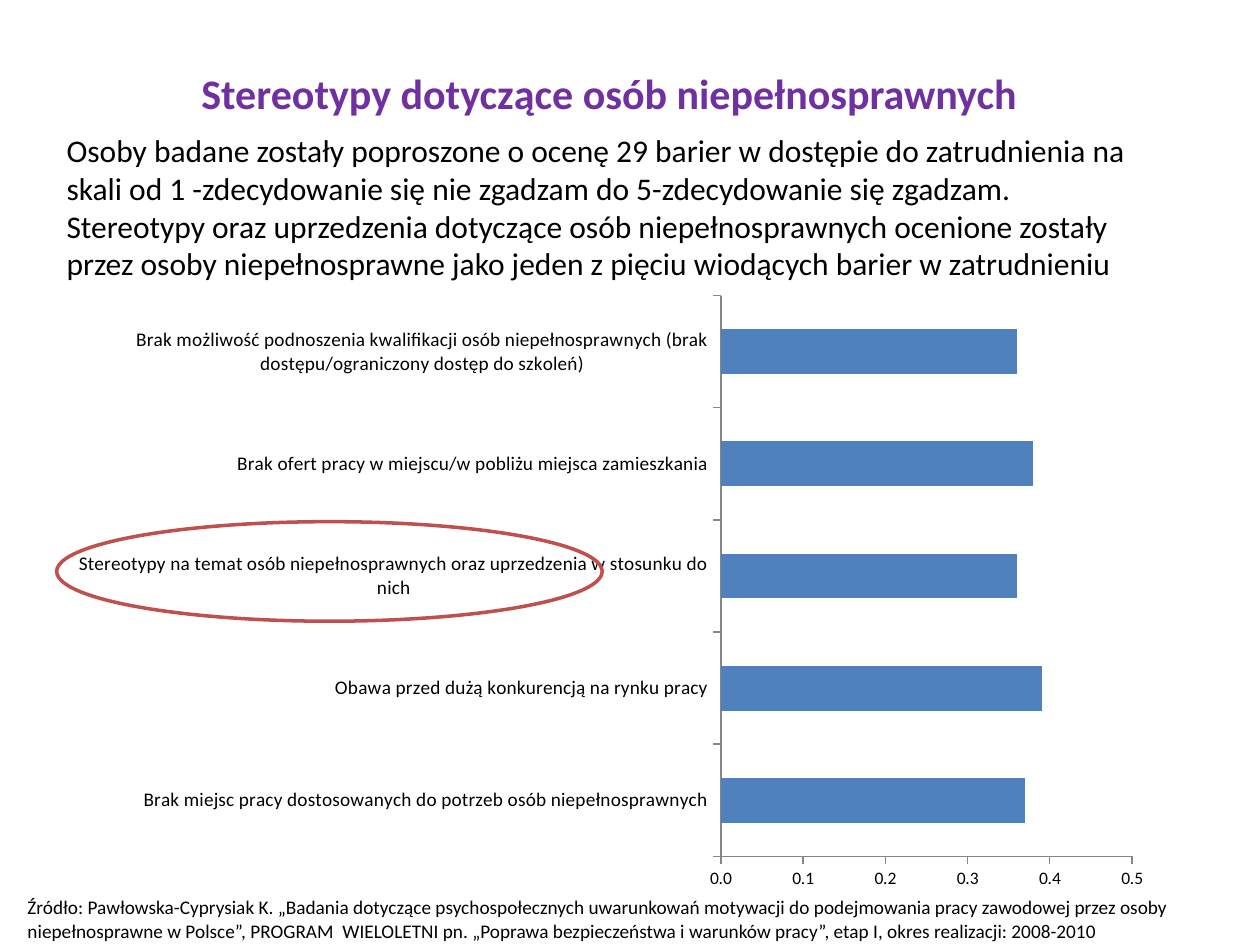
"""Build the slide on stereotypes about disabled people with a bar chart of barriers."""
import dataclasses

import pptx
import pptx.chart.data
import pptx.dml.color
import pptx.enum.chart
import pptx.enum.shapes
import pptx.enum.text
import pptx.oxml
import pptx.oxml.ns
import pptx.util


@dataclasses.dataclass(frozen=True)
class Theme:
    font: str = "Calibri"
    title: str = "7030A0"
    text: str = "000000"
    bar: str = "4F81BD"
    highlight: str = "C0504D"
    axis: str = "868686"
    title_size: int = 24
    body_size: int = 18
    label_size: int = 11
    value_size: int = 10


theme = Theme()
presentation = pptx.Presentation()
presentation.slide_width = pptx.util.Inches(10)
presentation.slide_height = pptx.util.Inches(7.5)
slide = presentation.slides.add_slide(presentation.slide_layouts[6])
COLUMN = presentation.slide_width / 100
ROW = presentation.slide_height / 75


def place(left, top, width, height):
    """Turn grid columns and rows into slide lengths."""
    return round(left * COLUMN), round(top * ROW), round(width * COLUMN), round(height * ROW)


def style(font, size, color, bold=False):
    """Set the look of a font."""
    font.name = theme.font
    font.size = pptx.util.Pt(size)
    font.bold = bold
    font.color.rgb = pptx.dml.color.RGBColor.from_string(color)


align = pptx.enum.text.PP_ALIGN
texts = [
    ((1.5, 4.9, 93.7, 5), "Stereotypy dotyczące osób niepełnosprawnych",
     theme.title_size, theme.title, True, align.CENTER),
    ((4.3, 9.9, 86.6, 13.1),
     "Osoby badane zostały poproszone o ocenę 29 barier w dostępie do zatrudnienia na skali "
     "od 1 -zdecydowanie się nie zgadzam do 5-zdecydowanie się zgadzam.  Stereotypy oraz "
     "uprzedzenia dotyczące osób niepełnosprawnych ocenione zostały  przez osoby "
     "niepełnosprawne jako jeden z pięciu wiodących barier w zatrudnieniu",
     theme.body_size, theme.text, False, align.LEFT),
    ((1.2, 70.6, 95.3, 4.4),
     "Źródło: Pawłowska-Cyprysiak K. „Badania dotyczące psychospołecznych uwarunkowań "
     "motywacji do podejmowania pracy zawodowej przez osoby niepełnosprawne w Polsce”, "
     "PROGRAM  WIELOLETNI pn. „Poprawa bezpieczeństwa i warunków pracy”, etap I, okres "
     "realizacji: 2008-2010",
     theme.label_size, theme.text, False, align.LEFT),
]
for area, text, size, color, bold, alignment in texts:
    frame = slide.shapes.add_textbox(*place(*area)).text_frame
    frame.word_wrap = True
    paragraph = frame.paragraphs[0]
    paragraph.alignment = alignment
    run = paragraph.add_run()
    run.text = text
    style(run.font, size, color, bold)

barriers = {
    "Brak miejsc pracy dostosowanych do potrzeb osób niepełnosprawnych": 3.7,
    "Obawa przed dużą konkurencją na rynku pracy": 3.9,
    "Stereotypy na temat osób niepełnosprawnych oraz uprzedzenia w stosunku do nich": 3.6,
    "Brak ofert pracy w miejscu/w pobliżu miejsca zamieszkania": 3.8,
    "Brak możliwość podnoszenia kwalifikacji osób niepełnosprawnych "
    "(brak dostępu/ograniczony dostęp do szkoleń)": 3.6,
}
chart_data = pptx.chart.data.CategoryChartData()
chart_data.categories = list(barriers)
chart_data.add_series("Series 1", list(barriers.values()))
chart = slide.shapes.add_chart(
    pptx.enum.chart.XL_CHART_TYPE.BAR_CLUSTERED, *place(4.3, 22.5, 88.2, 48.9), chart_data
).chart
chart.has_legend = False
chart.has_title = False
style(chart.font, theme.value_size, theme.text)

plot = chart.plots[0]
plot.gap_width = 150
plot.vary_by_categories = False
fill = plot.series[0].format.fill
fill.solid()
fill.fore_color.rgb = pptx.dml.color.RGBColor.from_string(theme.bar)

for axis, size in ((chart.category_axis, theme.label_size), (chart.value_axis, theme.value_size)):
    axis.has_major_gridlines = False
    axis.major_tick_mark = pptx.enum.chart.XL_TICK_MARK.OUTSIDE
    axis.minor_tick_mark = pptx.enum.chart.XL_TICK_MARK.NONE
    axis.format.line.color.rgb = pptx.dml.color.RGBColor.from_string(theme.axis)
    axis.format.line.width = pptx.util.Pt(0.75)
    style(axis.tick_labels.font, size, theme.text)
chart.value_axis.minimum_scale = 0
chart.value_axis.maximum_scale = 5
chart.value_axis.major_unit = 1
chart.value_axis.tick_labels.number_format = r"0\.0"
chart.value_axis.tick_labels.number_format_is_linked = False

plot_area = chart.plots[0]._element.getparent()
for old_layout in plot_area.findall(pptx.oxml.ns.qn("c:layout")):
    plot_area.remove(old_layout)
plot_area.insert(0, pptx.oxml.parse_xml(
    f'<c:layout {pptx.oxml.ns.nsdecls("c")}><c:manualLayout>'
    '<c:layoutTarget val="inner"/><c:xMode val="edge"/><c:yMode val="edge"/>'
    '<c:x val="0.6"/><c:y val="0.02"/><c:w val="0.37"/><c:h val="0.91"/>'
    '</c:manualLayout></c:layout>'
))

ellipse = slide.shapes.add_shape(
    pptx.enum.shapes.MSO_SHAPE.OVAL, *place(4.5, 41.4, 43.3, 7.9)
)
ellipse.shadow.inherit = False
ellipse.fill.background()
ellipse.line.color.rgb = pptx.dml.color.RGBColor.from_string(theme.highlight)
ellipse.line.width = pptx.util.Pt(2)

presentation.save("out.pptx")
